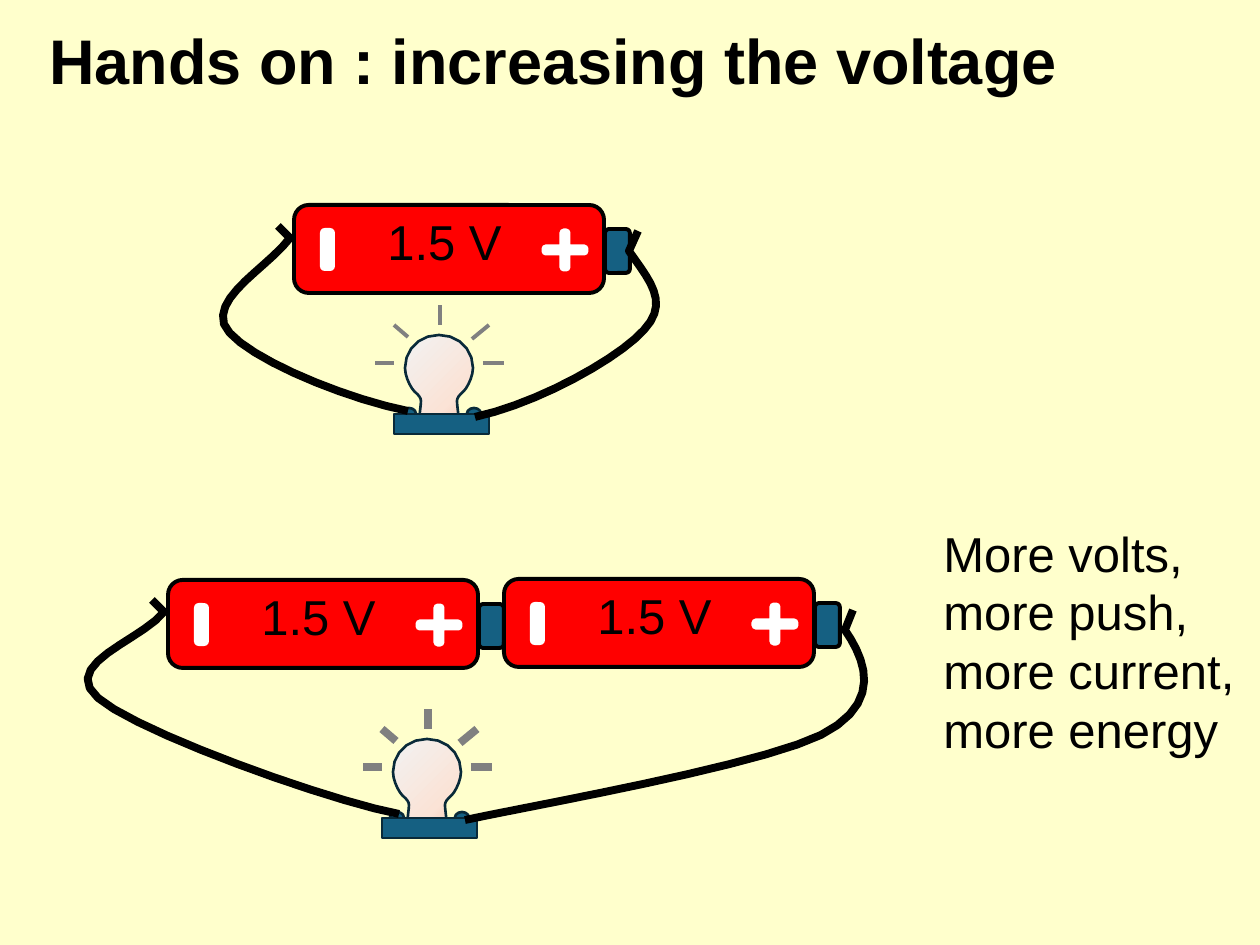
from pptx import Presentation
from pptx.dml.color import RGBColor
from pptx.enum.shapes import MSO_CONNECTOR, MSO_SHAPE
from pptx.enum.text import MSO_ANCHOR
from pptx.oxml import parse_xml
from pptx.oxml.ns import nsdecls, qn
from pptx.util import Pt

SCALE = 914400 / 126
BLACK, RED, BLUE, WHITE = "000000", "FF0000", "156082", "FFFFFF"
NAVY, GREY, CREAM = "092A39", "808080", "FFFFCC"
GLASS_STOPS = [(0, "F2F2F2"), (71, "FBE3D6"), (100, "F6C6AD")]
GLASS_HALF = [(64, 30), (84, 30), (98, 45), (98, 63), (98, 72),
              (92, 83), (89, 86), (86, 89), (82, 92), (82, 96),
              (82, 100), (84, 112), (84, 120)]
RAYS = [(97, 34, 114, 20), (108, 58, 129, 58), (65, 20, 65, 0),
        (33, 32, 19, 20), (19, 58, 0, 58)]


def px(n):
    """Turn px into EMU."""
    return round(n * SCALE)


def color(value):
    """Turn a hex string into a colour."""
    return RGBColor.from_string(value)


def paint(sp, fill=None, line=None, width=1.5):
    """Set fill and outline, without shadow."""
    sp.shadow.inherit = False
    if fill:
        sp.fill.solid()
        sp.fill.fore_color.rgb = color(fill)
    else:
        sp.fill.background()
    if line:
        sp.line.color.rgb = color(line)
        sp.line.width = Pt(width)
    else:
        sp.line.fill.background()


def add_text(shapes, text, x, y, w, h, size=28, bold=False, wrap=True,
             anchor=MSO_ANCHOR.TOP, spacing=None, after=None):
    """Add a text box with one paragraph."""
    tf = shapes.add_textbox(px(x), px(y), px(w), px(h)).text_frame
    tf.word_wrap = wrap
    tf.vertical_anchor = anchor
    p = tf.paragraphs[0]
    p.line_spacing = spacing
    if after:
        p.space_after = Pt(after)
    r = p.add_run()
    r.text = text
    r.font.name = "Arial"
    r.font.size = Pt(size)
    r.font.bold = bold
    r.font.color.rgb = color(BLACK)


def add_box(shapes, kind, x, y, w, h, adj=None, **style):
    """Add a painted preset shape."""
    sp = shapes.add_shape(kind, px(x), px(y), px(w), px(h))
    if adj:
        sp.adjustments[0] = adj
    paint(sp, **style)


def curve(controls, steps):
    """Return points along joined cubic curves."""
    points = [controls[0]]
    for i in range(0, len(controls) - 1, 3):
        for j in range(1, steps + 1):
            t = j / steps
            weights = ((1 - t) ** 3, 3 * t * (1 - t) ** 2, 3 * t * t * (1 - t), t ** 3)
            points.append(tuple(sum(k * p[axis] for k, p in zip(weights, controls[i:i + 4]))
                                for axis in (0, 1)))
    return points


def add_path(shapes, x, y, points, close=True, **style):
    """Add a painted outline through points offset from x, y."""
    pts = [(px(x + u), px(y + v)) for u, v in points]
    builder = shapes.build_freeform(*pts[0], scale=1.0)
    builder.add_line_segments(pts[1:], close=close)
    sp = builder.convert_to_shape()
    paint(sp, **style)
    return sp


def plus_points(half_w=23.5, half_h=21.5, t=5.5, r=4):
    """Return the outline of a plus with rounded ends around its centre."""
    points = []
    for a, c, n in ((half_w, 1, 0), (half_h, 0, 1), (half_w, -1, 0), (half_h, 0, -1)):
        arm = curve([(a - r, -t), (a - r / 2, -t), (a, -t + r / 2), (a, -t + r)], 2)
        arm += [(u, -v) for u, v in reversed(arm)] + [(t, t)]
        points += [(u * c - v * n, u * n + v * c) for u, v in arm]
    return points


def battery(s, x, y):
    """Draw a battery with its body's top left at x, y."""
    g = s.shapes.add_group_shape().shapes
    rounded = MSO_SHAPE.ROUNDED_RECTANGLE
    add_box(g, rounded, x + 311, y + 24, 25, 44, fill=BLUE, line=BLACK, width=2.25)
    add_box(g, rounded, x, y, 310, 88, fill=RED, line=BLACK, width=2.25)
    add_path(g, x + 271, y + 45, plus_points(), fill=WHITE)
    add_box(g, rounded, x + 26, y + 23, 15, 43, adj=0.32, fill=WHITE)
    add_text(s.shapes, "1.5 V", x + 81, y, 141, 72, wrap=False)


def bulb(s, x, y, ray_width):
    """Draw a lit bulb on its holder, with rays of the given width."""
    g = s.shapes.add_group_shape().shapes
    half = curve(GLASS_HALF, 5)
    mirrored = [(128 - u, v) for u, v in reversed(half)]
    glass = add_path(g, x, y, half + mirrored[:-1], line=NAVY)
    stops = "".join(f'<a:gs pos="{pos * 1000}"><a:srgbClr val="{value}"/></a:gs>'
                    for pos, value in GLASS_STOPS)
    grad = parse_xml(f'<a:gradFill {nsdecls("a")}><a:gsLst>{stops}</a:gsLst>'
                     '<a:path path="circle"><a:fillToRect r="100000" b="100000"/>'
                     '</a:path></a:gradFill>')
    sp_pr = glass._element.spPr
    sp_pr.replace(sp_pr.find(qn("a:noFill")), grad)
    for x1, y1, x2, y2 in RAYS:
        ray = g.add_connector(MSO_CONNECTOR.STRAIGHT, px(x + x1), px(y + y1),
                              px(x + x2), px(y + y2))
        ray.line.color.rgb = color(GREY)
        ray.line.width = Pt(ray_width)
        ray._element.spPr.append(parse_xml(f'<a:effectLst {nsdecls("a")}/>'))
    for left in (27, 92):
        add_box(g, MSO_SHAPE.OVAL, x + left, y + 103, 14, 11, fill=BLUE, line=NAVY)
    add_box(g, MSO_SHAPE.RECTANGLE, x + 19, y + 109, 95, 20, fill=BLUE, line=NAVY)


def wire(s, x, y, controls):
    """Draw a wire whose free end is at x, y."""
    add_path(s.shapes, x, y, [(0, 0)] + curve(controls, 10), close=False,
             line=BLACK, width=4.5)


def single_circuit(s, x, y):
    """Draw one battery lighting a bulb."""
    battery(s, x + 71, y)
    bulb(s, x + 152, y + 100, 2.25)
    wire(s, x + 55, y + 21, [(12, 12), (-10, 41), (-63, 69), (-54, 98),
                             (-44, 126), (60, 171), (130, 185)])
    wire(s, x + 415, y + 26, [(-9, 20), (11, 49), (32, 71), (6, 99),
                              (-19, 127), (-99, 172), (-163, 186)])


def double_circuit(s, x, y):
    """Draw two batteries in series lighting a brighter bulb."""
    battery(s, x + 80, y + 1)
    bulb(s, x + 275, y + 130, 4.5)
    wire(s, x + 64, y + 21, [(12, 12), (-11, 41), (-93, 64), (-54, 98),
                             (-15, 132), (177, 201), (247, 214)])
    wire(s, x + 765, y + 31, [(-8, 20), (12, 49), (31, 93), (-32, 125),
                              (-95, 156), (-323, 196), (-388, 210)])
    battery(s, x + 416, y)


def main():
    """Build the slide and save it."""
    prs = Presentation()
    prs.slide_width, prs.slide_height = px(1260), px(945)
    s = prs.slides.add_slide(prs.slide_layouts[6])
    s.background.fill.solid()
    s.background.fill.fore_color.rgb = color(CREAM)
    add_text(s.shapes, "Hands on : increasing the voltage", 37, 23, 1196, 82,
             size=36, bold=True, anchor=MSO_ANCHOR.MIDDLE, spacing=0.9)
    single_circuit(s, 223, 205)
    double_circuit(s, 88, 579)
    add_text(s.shapes, "More volts, more push, more current, more energy",
             931, 517, 329, 251, after=12)
    prs.save("out.pptx")


if __name__ == "__main__":
    main()
